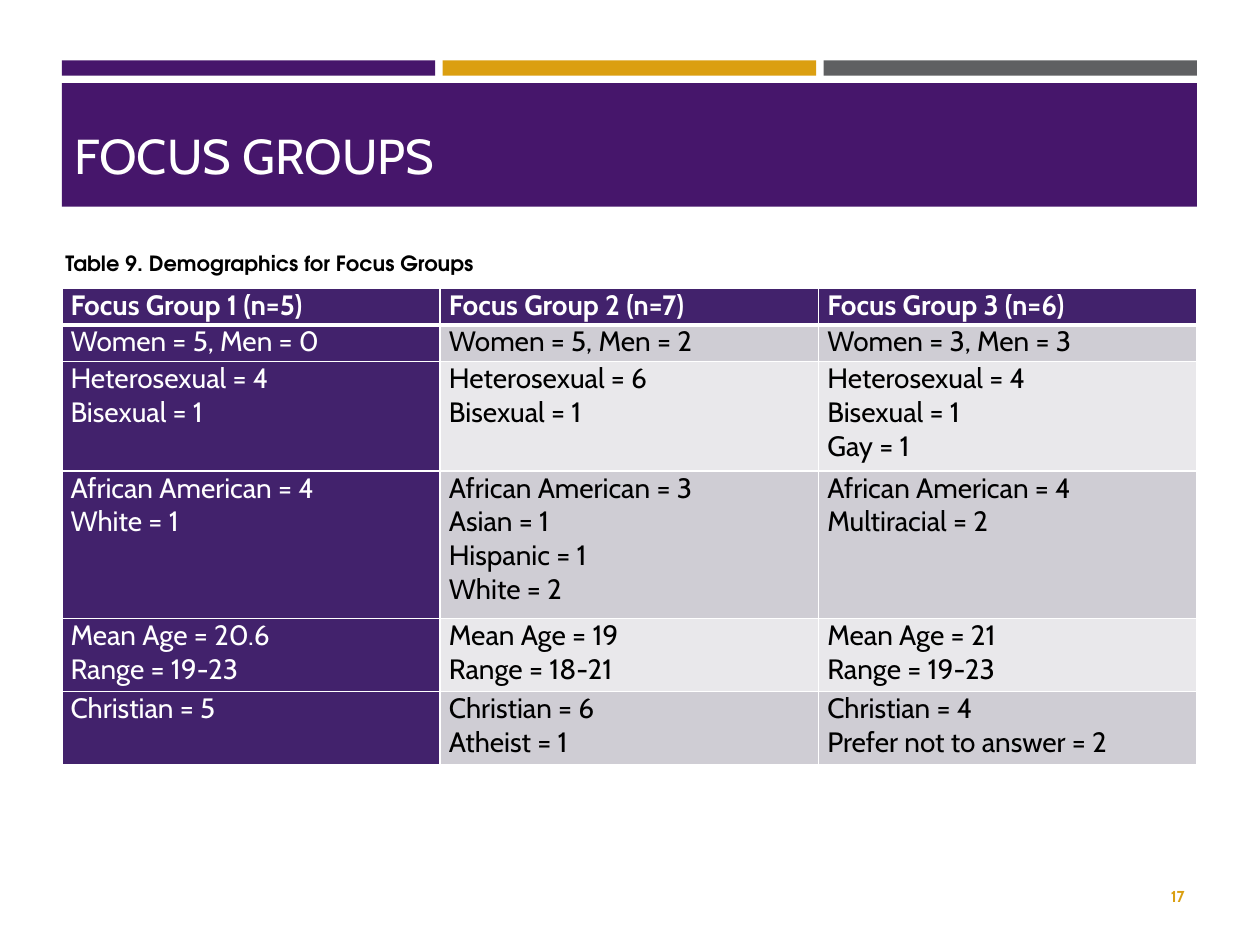
from lxml import etree
from pptx import Presentation
from pptx.dml.color import RGBColor
from pptx.enum import shapes, text
from pptx.oxml.ns import qn
from pptx.util import Inches, Pt

PURPLE, GOLD, GRAY = "46166B", "DB9F11", "5F6062"
WHITE, BLACK = "FFFFFF", "000000"
HEAD, BANDS = "42226C", ("CFCDD4", "E9E8EB")

HEADERS = ["Focus Group 1 (n=5)", "Focus Group 2 (n=7)", "Focus Group 3 (n=6)"]
ROWS = [
    ["Women = 5, Men = 0", "Women = 5, Men = 2", "Women = 3, Men = 3"],
    ["Heterosexual = 4\nBisexual = 1", "Heterosexual = 6\nBisexual = 1",
     "Heterosexual = 4\nBisexual = 1\nGay = 1"],
    ["African American = 4\nWhite = 1",
     "African American = 3\nAsian = 1\nHispanic = 1\nWhite = 2",
     "African American = 4\nMultiracial = 2"],
    ["Mean Age = 20.6\nRange = 19-23", "Mean Age = 19\nRange = 18-21",
     "Mean Age = 21\nRange = 19-23"],
    ["Christian = 5", "Christian = 6\nAtheist = 1",
     "Christian = 4\nPrefer not to answer = 2"],
]


def rgb(value):
    return RGBColor.from_string(value)


def style(p, size, color, bold=False, font="Cabin"):
    p.font.size, p.font.bold, p.font.name = Pt(size), bold, font
    p.font.color.rgb = rgb(color)


def add_bar(slide, x, y, w, h, color):
    sp = slide.shapes.add_shape(shapes.MSO_SHAPE.RECTANGLE,
                                Inches(x), Inches(y), Inches(w), Inches(h))
    sp.shadow.inherit = False
    sp.fill.solid()
    sp.fill.fore_color.rgb = rgb(color)
    sp.line.fill.background()


def add_label(slide, x, y, w, h, words, size, color, anchor, wrap=True,
              align=text.PP_ALIGN.LEFT, **font):
    tf = slide.shapes.add_textbox(Inches(x), Inches(y), Inches(w), Inches(h)).text_frame
    tf.word_wrap = wrap
    tf.vertical_anchor = anchor
    p = tf.paragraphs[0]
    p.text, p.alignment = words, align
    style(p, size, color, **font)


def add_banner(slide, x, y, w, h):
    gap, strip = 0.06, 0.12
    bar_w = (w - 2 * gap) / 3
    for i, color in enumerate((PURPLE, GOLD, GRAY)):
        add_bar(slide, x + i * (bar_w + gap), y, bar_w, strip, color)
    top = y + strip + gap
    add_bar(slide, x, top, w, y + h - top, PURPLE)
    add_label(slide, x, 0.75, w, 0.76, "FOCUS GROUPS", 28, WHITE,
              text.MSO_ANCHOR.BOTTOM)


def add_borders(cell, widths):
    tc_pr = cell._tc.get_or_add_tcPr()
    for i, (side, width) in enumerate(zip("LRTB", widths)):
        ln = etree.Element(qn(f"a:ln{side}"), w=str(Pt(width)))
        fill = etree.SubElement(ln, qn("a:solidFill"))
        etree.SubElement(fill, qn("a:srgbClr"), val=WHITE)
        tc_pr.insert(i, ln)


def fill_cell(cell, words, fill, color, bold, widths):
    cell.margin_left = cell.margin_right = Inches(0.07)
    cell.margin_top = cell.margin_bottom = 0
    cell.fill.solid()
    cell.fill.fore_color.rgb = rgb(fill)
    cell.text = words
    for p in cell.text_frame.paragraphs:
        style(p, 16, color, bold)
    add_borders(cell, widths)


def add_demographics(slide, x, y, w, h):
    heights = [0.29, 0.29, 0.87, 1.17, 0.58, 0.58]
    table = slide.shapes.add_table(len(heights), len(HEADERS), Inches(x), Inches(y),
                                   Inches(w), Inches(h)).table
    for column in table.columns:
        column.width = Inches(w / len(HEADERS))
    for row, height in zip(table.rows, heights):
        row.height = Inches(height)
    for r, values in enumerate([HEADERS] + ROWS):
        for c, words in enumerate(values):
            dark = r == 0 or c == 0
            fill = HEAD if dark else BANDS[(r - 1) % 2]
            widths = (1, 1, 3 if r == 1 else 1, 3 if r == 0 else 1)
            fill_cell(table.cell(r, c), words, fill, WHITE if dark else BLACK,
                      r == 0, widths)


def main():
    prs = Presentation()
    prs.slide_width, prs.slide_height = Inches(10), Inches(7.5)
    slide = prs.slides.add_slide(prs.slide_layouts[6])
    add_banner(slide, 0.49, 0.48, 9.01, 1.16)
    add_label(slide, 8.53, 6.91, 0.97, 0.4, "17", 9, "DA9F11",
              text.MSO_ANCHOR.MIDDLE, align=text.PP_ALIGN.RIGHT, bold=True)
    add_demographics(slide, 0.49, 2.29, 9.01, 3.79)
    add_label(slide, 0.42, 1.94, 3.53, 0.3, "Table 9. Demographics for Focus Groups",
              12, BLACK, text.MSO_ANCHOR.MIDDLE, wrap=False, bold=True,
              font="TeX Gyre Adventor")
    prs.save("out.pptx")


if __name__ == "__main__":
    main()
